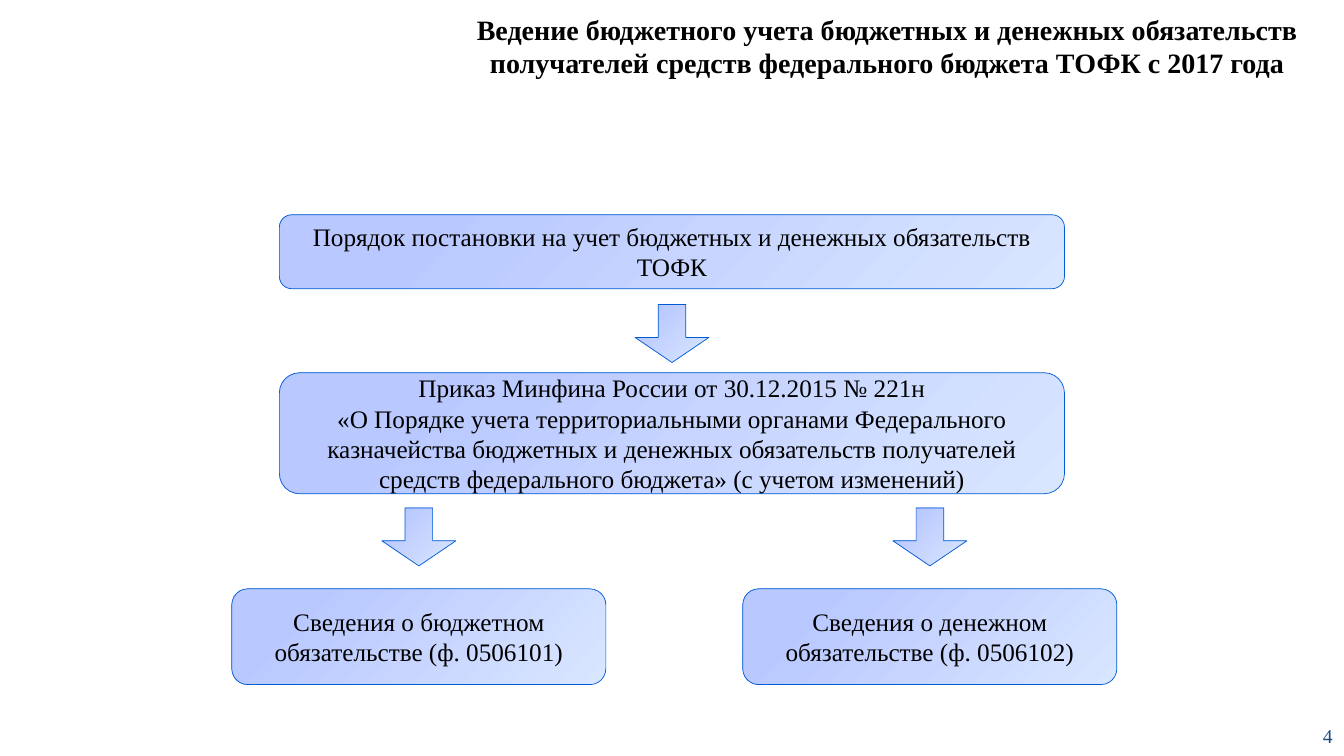
from lxml.etree import SubElement
from pptx import Presentation
from pptx.dml.color import RGBColor
from pptx.enum.shapes import MSO_SHAPE
from pptx.enum.text import MSO_ANCHOR, MSO_AUTO_SIZE, PP_ALIGN
from pptx.oxml.ns import qn
from pptx.util import Pt

FONT = "Times New Roman"
COLORS = {
    "text": "000000",
    "number": "1F497D",
    "outline": "005BD3",
    "fill start": "B9C8FF",
    "fill end": "D9E6FF",
}
MIDDLE, LEFT, RIGHT = 480, 299.2, 664.2  # centres of the columns


def add_node(kind, center_x, center_y, width, height):
    """Add a shape around a centre, with an outline and a gradient spreading from its top left."""
    node = slide.shapes.add_shape(
        kind, Pt(center_x - width / 2), Pt(center_y - height / 2), Pt(width), Pt(height))
    node.shadow.inherit = False
    node.line.color.rgb = RGBColor.from_string(COLORS["outline"])
    node.line.width = Pt(0.5)
    node.fill.gradient()
    start, end = node.fill.gradient_stops
    start.position, end.position = 0.18, 1
    start.color.rgb = RGBColor.from_string(COLORS["fill start"])
    end.color.rgb = RGBColor.from_string(COLORS["fill end"])
    gradient = node._element.spPr.find(qn("a:gradFill"))
    gradient.remove(gradient.find(qn("a:lin")))
    radial = SubElement(gradient, qn("a:path"), path="circle")
    SubElement(radial, qn("a:fillToRect"), r="100000", b="100000")
    return node


def write(frame, text, size, color, align, bold=False):
    frame.text = text
    for paragraph in frame.paragraphs:
        paragraph.alignment = align
        paragraph.font.name = FONT
        paragraph.font.size = Pt(size)
        paragraph.font.bold = bold
        paragraph.font.color.rgb = RGBColor.from_string(COLORS[color])


prs = Presentation()
prs.slide_width, prs.slide_height = Pt(960), Pt(540)
slide = prs.slides.add_slide(prs.slide_layouts[5])

title = slide.shapes.title
title.left, title.top, title.width, title.height = Pt(308.2), Pt(5), Pt(651), Pt(55.4)
title.text_frame.vertical_anchor = MSO_ANCHOR.TOP
title.text_frame.auto_size = MSO_AUTO_SIZE.SHAPE_TO_FIT_TEXT
write(title.text_frame,
      "Ведение бюджетного учета бюджетных и денежных обязательств "
      "получателей средств федерального бюджета ТОФК с 2017 года",
      20, "text", PP_ALIGN.CENTER, bold=True)

steps = [
    (MIDDLE, 179.8, 560.8, 52.8,
     "Порядок постановки на учет бюджетных и денежных обязательств\nТОФК"),
    (MIDDLE, 309.5, 560.8, 86.4,
     "Приказ Минфина России от 30.12.2015 № 221н\n"
     "«О Порядке учета территориальными органами Федерального казначейства "
     "бюджетных и денежных обязательств получателей средств федерального бюджета» "
     "(с учетом изменений)"),
    (LEFT, 454.8, 267.2, 68.4, "Сведения о бюджетном обязательстве (ф. 0506101)"),
    (RIGHT, 454.8, 267.2, 68.4, "Сведения о денежном обязательстве (ф. 0506102)"),
]
for center_x, center_y, width, height, text in steps:
    step = add_node(MSO_SHAPE.ROUNDED_RECTANGLE, center_x, center_y, width, height)
    step.adjustments[0] = 0.167
    step.text_frame.word_wrap = True
    step.text_frame.vertical_anchor = MSO_ANCHOR.MIDDLE
    write(step.text_frame, text, 18, "text", PP_ALIGN.CENTER)

for center_x, center_y in [(MIDDLE, 238.2), (LEFT, 383.5), (RIGHT, 383.5)]:
    arrow = add_node(MSO_SHAPE.RIGHT_ARROW, center_x, center_y, 41.4, 52.8)
    arrow.rotation = 90
    arrow.adjustments[0] = 0.372
    arrow.adjustments[1] = 0.432

page_number = slide.shapes.add_textbox(Pt(926), Pt(514), Pt(33), Pt(23))
page_number.text_frame.word_wrap = False
page_number.text_frame.vertical_anchor = MSO_ANCHOR.MIDDLE
write(page_number.text_frame, "4", 14, "number", PP_ALIGN.RIGHT)

prs.save("out.pptx")
